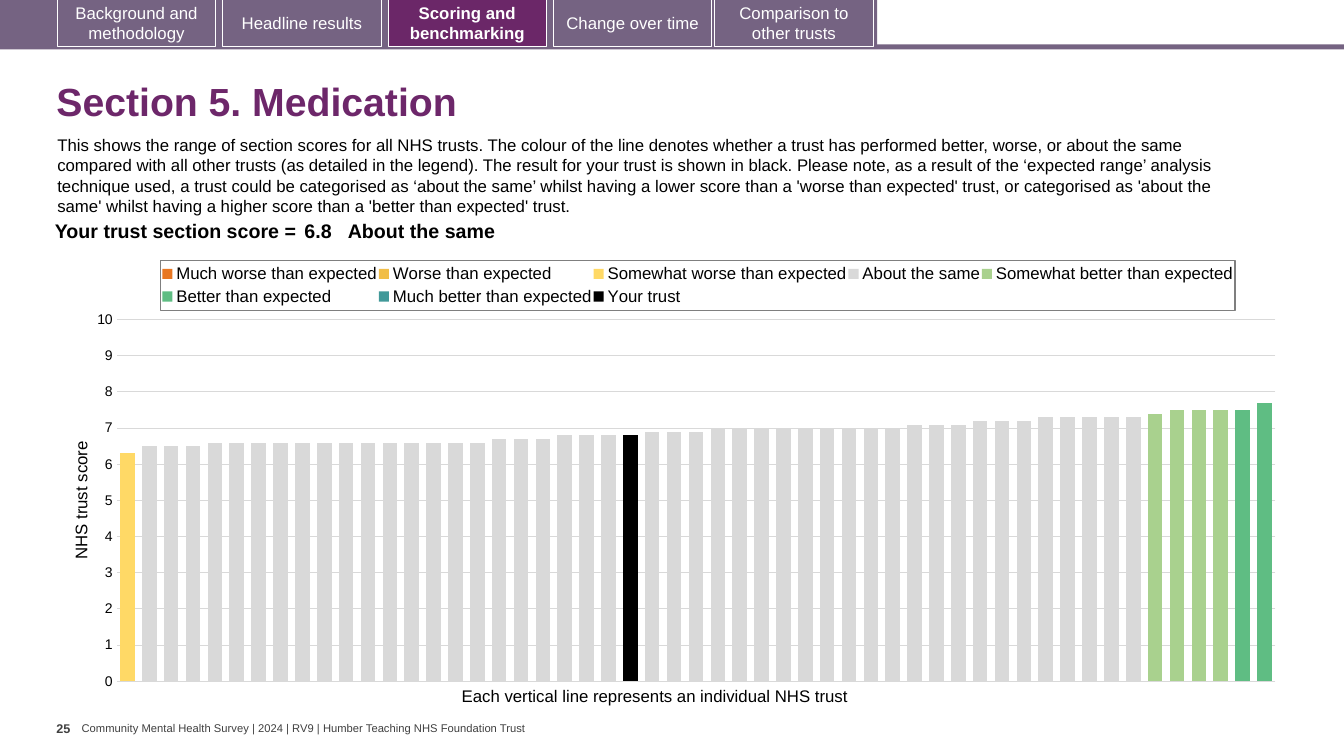
from copy import deepcopy
from pptx import Presentation
from pptx import util as u
from pptx.chart.data import CategoryChartData
from pptx.dml.color import RGBColor
from pptx.enum import chart as ch, shapes, text
from pptx.oxml import parse_xml
from pptx.oxml.ns import nsdecls, qn

# Content
TABS = ["Background and methodology", "Headline results", "Scoring and benchmarking",
        "Change over time", "Comparison to other trusts"]
TAB_LEFTS = [0.57, 2.21, 3.85, 5.49, 7.09]
ACTIVE_TAB = 2
TITLE = "Section 5. Medication"
INTRO = (
    "This shows the range of section scores for all NHS trusts. The colour of the line denotes "
    "whether a trust has performed better, worse, or about the same compared with all other "
    "trusts (as detailed in the legend). The result for your trust is shown in black. Please "
    "note, as a result of the ‘expected range’ analysis technique used, a trust could be "
    "categorised as ‘about the same’ whilst having a lower score than a 'worse than expected' "
    "trust, or categorised as 'about the same' whilst having a higher score than a 'better than "
    "expected' trust.")
# Text, column width, side margin, alignment
SCORE_CELLS = [("Your trust section score =", 2.63, 0.04, "right"),
               ("6.8", 0.47, 0.04, "left"),
               ("About the same", 8.59, 0, "left")]
AXIS_TITLE = "NHS trust score"
AXIS_NOTE = "Each vertical line represents an individual NHS trust"
PAGE = "25"
FOOTER = "Community Mental Health Survey | 2024 | RV9 | Humber Teaching NHS Foundation Trust"
TRUST_COUNT = 53
ABOUT_SAME = ([6.5] * 3 + [6.6] * 13 + [6.7] * 3 + [6.8] * 4 + [6.9] * 3
              + [7] * 9 + [7.1] * 3 + [7.2] * 3 + [7.3] * 5)
# Band name, colour, position of its first trust, scores
BANDS = [
    ("Much worse than expected", "E87722", 0, []),
    ("Worse than expected", "F1BE48", 0, []),
    ("Somewhat worse than expected", "FFD966", 0, [6.3]),
    ("About the same", "D9D9D9", 1, ABOUT_SAME),
    ("Somewhat better than expected", "A9D18E", 47, [7.4, 7.5, 7.5, 7.5]),
    ("Better than expected", "5FBD83", 51, [7.5, 7.7]),
    ("Much better than expected", "419999", 0, []),
    ("Your trust", "000000", 23, [6.8]),
]
PLOT_BOX = (0.04, 0.158, 0.946, 0.808)
LEGEND_BOX = (0.076, 0.025, 0.877, 0.112)


class Theme:
    font = "Arial"
    band, active, title = "756382", "6B2768", "6D276A"
    white, ink, footer, grid, frame = "FFFFFF", "000000", "404040", "D9D9D9", "7F7F7F"
    title_size, score_size, body_size, tick_size, page_size, footer_size = 28, 14, 12, 10, 9, 8


ALIGN = {"left": text.PP_ALIGN.LEFT, "center": text.PP_ALIGN.CENTER,
         "right": text.PP_ALIGN.RIGHT}


def rgb(color):
    return RGBColor.from_string(color)


def style_font(font, size, color=Theme.ink, bold=False):
    font.name, font.size, font.bold = Theme.font, u.Pt(size), bold
    font.color.rgb = rgb(color)


def write(frame, words, size=Theme.body_size, color=Theme.ink, bold=False, align="left",
          anchor=text.MSO_ANCHOR.TOP, wrap=True, margins=None, spacing=None):
    frame.text = words
    frame.word_wrap = wrap
    frame.vertical_anchor = anchor
    if margins:
        (frame.margin_left, frame.margin_top,
         frame.margin_right, frame.margin_bottom) = map(u.Inches, margins)
    paragraph = frame.paragraphs[0]
    paragraph.alignment = ALIGN[align]
    if spacing:
        paragraph.line_spacing = spacing
    style_font(paragraph.runs[0].font, size, color, bold)


def text_box(left, top, width, height, words, **style):
    box = slide.shapes.add_textbox(*map(u.Inches, (left, top, width, height)))
    write(box.text_frame, words, **style)


def rectangle(left, top, width, height, fill, line=None):
    shape = slide.shapes.add_shape(shapes.MSO_SHAPE.RECTANGLE,
                                   *map(u.Inches, (left, top, width, height)))
    shape.shadow.inherit = False
    shape.fill.solid()
    shape.fill.fore_color.rgb = rgb(fill)
    if line:
        shape.line.color.rgb = rgb(line)
        shape.line.width = u.Pt(0.75)
    else:
        shape.line.fill.background()
    return shape


def manual_layout(box, inner=False):
    target = '<c:layoutTarget val="inner"/>' if inner else ""
    modes = '<c:xMode val="edge"/><c:yMode val="edge"/>'
    sizes = "".join(f'<c:{name} val="{value}"/>' for name, value in zip("xywh", box))
    return parse_xml(f'<c:layout {nsdecls("c")}><c:manualLayout>{target}{modes}{sizes}'
                     '</c:manualLayout></c:layout>')


def drop(parent, *tags):
    for tag in tags:
        for child in parent.findall(qn(tag)):
            parent.remove(child)


def move_to_right_axis(plot_area):
    """Put the last series on a second, unlabelled value axis."""
    left_bars = plot_area.find(qn("c:barChart"))
    right_bars = deepcopy(left_bars)
    left_bars.remove(left_bars.findall(qn("c:ser"))[-1])
    for series in right_bars.findall(qn("c:ser"))[:-1]:
        right_bars.remove(series)
    left_bars.addnext(right_bars)
    ids = {"c:catAx": "5001", "c:valAx": "5002"}
    for axis_id, new_id in zip(right_bars.findall(qn("c:axId")), ids.values()):
        axis_id.set("val", new_id)
    last_axis = plot_area.find(qn("c:valAx"))
    for tag, cross_id in zip(ids, reversed(ids.values())):
        axis = deepcopy(plot_area.find(qn(tag)))
        axis.find(qn("c:axId")).set("val", ids[tag])
        axis.find(qn("c:crossAx")).set("val", cross_id)
        last_axis.addnext(axis)
        last_axis = axis
    drop(last_axis, "c:majorGridlines", "c:title")
    for tag, value in (("c:axPos", "r"), ("c:tickLblPos", "none"), ("c:crosses", "max")):
        last_axis.find(qn(tag)).set("val", value)


prs = Presentation()
prs.slide_width, prs.slide_height = u.Inches(13.33), u.Inches(7.5)
slide = prs.slides.add_slide(prs.slide_layouts[5])

# Navigation tabs
rectangle(0, 0.44, 13.33, 0.05, Theme.band)
rectangle(0, 0, 8.7, 0.47, Theme.band)
for index, (label, left) in enumerate(zip(TABS, TAB_LEFTS)):
    active = index == ACTIVE_TAB
    tab = rectangle(left, -0.01, 1.57, 0.47, Theme.active if active else Theme.band, Theme.white)
    write(tab.text_frame, label, color=Theme.white, bold=active, align="center",
          anchor=text.MSO_ANCHOR.MIDDLE)

# Title and introduction
title = slide.shapes.title
title.left, title.top, title.width, title.height = map(u.Inches, (0.46, 0.67, 12.49, 0.72))
write(title.text_frame, TITLE, size=Theme.title_size, color=Theme.title, bold=True,
      anchor=text.MSO_ANCHOR.MIDDLE, spacing=0.9)
text_box(0.47, 1.29, 12.13, 0.91, INTRO)

# Score chart
scores = CategoryChartData()
scores.categories = [str(n + 1) for n in range(TRUST_COUNT)]
for name, color, start, values in BANDS:
    scores.add_series(name, [None] * start + values
                      + [None] * (TRUST_COUNT - start - len(values)))
chart = slide.shapes.add_chart(ch.XL_CHART_TYPE.COLUMN_CLUSTERED,
                               *map(u.Inches, (0.67, 2.47, 12.15, 4.44)), scores).chart
style_font(chart.font, Theme.tick_size)
chart.has_title = False
bars = chart.plots[0]
bars.gap_width, bars.overlap, bars.vary_by_categories = 50, 100, False
for series, (name, color, start, values) in zip(bars.series, BANDS):
    series.format.fill.solid()
    series.format.fill.fore_color.rgb = rgb(color)

# Chart axes
chart.category_axis.visible = False
score_axis = chart.value_axis
score_axis.minimum_scale, score_axis.maximum_scale, score_axis.major_unit = 0, 10, 1
score_axis.major_tick_mark = ch.XL_TICK_MARK.NONE
score_axis.tick_labels.number_format = "0"
score_axis.tick_labels.number_format_is_linked = False
style_font(score_axis.tick_labels.font, Theme.tick_size)
score_axis.format.line.fill.background()
score_axis.major_gridlines.format.line.color.rgb = rgb(Theme.grid)
score_axis.major_gridlines.format.line.width = u.Pt(0.75)
write(score_axis.axis_title.text_frame, AXIS_TITLE)
plot_area = chart.plots[0]._element.getparent()
drop(plot_area, "c:layout")
plot_area.insert(0, manual_layout(PLOT_BOX, inner=True))
move_to_right_axis(plot_area)

# Chart legend
chart.has_legend = True
legend = chart.legend
legend.position = ch.XL_LEGEND_POSITION.TOP
legend.include_in_layout = False
style_font(legend.font, Theme.body_size)
key = legend._element
drop(key, "c:layout")
key.find(qn("c:legendPos")).addnext(manual_layout(LEGEND_BOX))
key.find(qn("c:overlay")).addnext(parse_xml(
    f'<c:spPr {nsdecls("c", "a")}><a:ln w="9525"><a:solidFill><a:srgbClr val="{Theme.frame}"/>'
    '</a:solidFill></a:ln></c:spPr>'))
text_box(4.48, 6.75, 4.11, 0.3, AXIS_NOTE, wrap=False)

# Trust score line
score_table = slide.shapes.add_table(1, len(SCORE_CELLS), *map(
    u.Inches, (0.35, 2.15, 11.69, 0.31))).table
score_table.first_row = score_table.horz_banding = False
for column, (words, width, side, align) in enumerate(SCORE_CELLS):
    score_table.columns[column].width = u.Inches(width)
    cell = score_table.cell(0, column)
    cell.fill.background()
    write(cell.text_frame, words, size=Theme.score_size, bold=True, align=align)
    cell.margin_left = cell.margin_right = u.Inches(side)
    cell.margin_top = cell.margin_bottom = u.Inches(0.04)

# Footer
text_box(0.56, 7.1, 0.25, 0.4, PAGE, size=Theme.page_size, color=Theme.footer, bold=True,
         wrap=False, margins=(0, 0.05, 0, 0.05))
text_box(0.81, 7.16, 4.48, 0.13, FOOTER, size=Theme.footer_size, color=Theme.footer,
         wrap=False, margins=(0, 0, 0, 0), anchor=text.MSO_ANCHOR.MIDDLE)

prs.save("out.pptx")
